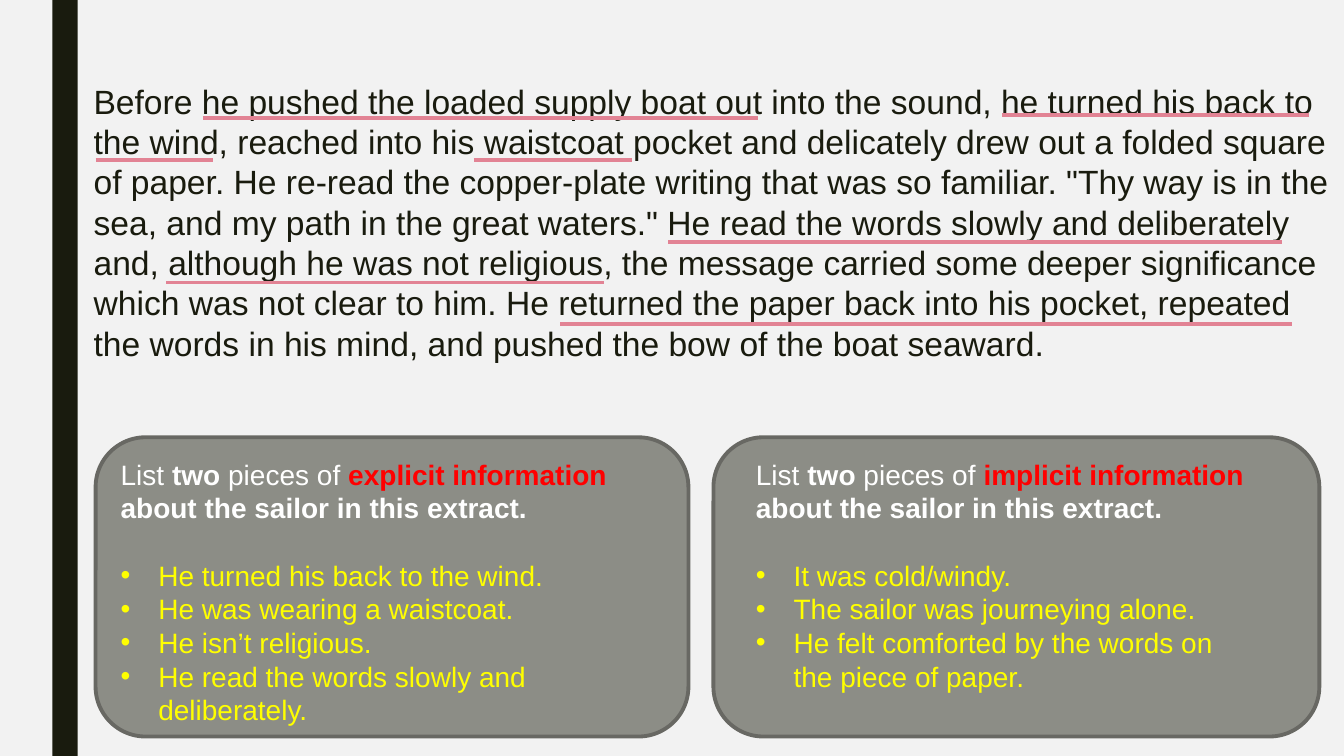
from dataclasses import dataclass

from lxml import etree
from pptx import Presentation
from pptx.dml.color import RGBColor
from pptx.enum.shapes import MSO_CONNECTOR, MSO_SHAPE
from pptx.oxml.ns import qn
from pptx.util import Cm, Pt

RECT = MSO_SHAPE.RECTANGLE
ROUNDED = MSO_SHAPE.ROUNDED_RECTANGLE
STRAIGHT = MSO_CONNECTOR.STRAIGHT


@dataclass(frozen=True)
class Theme:
    font: str = "Arial"
    background: RGBColor = RGBColor(0xF2, 0xF2, 0xF2)
    dark: RGBColor = RGBColor(0x19, 0x1B, 0x0E)
    panel: RGBColor = RGBColor(0x8C, 0x8D, 0x86)
    border: RGBColor = RGBColor(0x68, 0x68, 0x63)
    white: RGBColor = RGBColor(0xFF, 0xFF, 0xFF)
    key: RGBColor = RGBColor(0xFF, 0x00, 0x00)
    answer: RGBColor = RGBColor(0xFF, 0xFF, 0x00)
    underline: RGBColor = RGBColor(0xE2, 0x83, 0x94)
    extract_size: Pt = Pt(24)
    panel_size: Pt = Pt(20)
    line_width: Pt = Pt(2.75)


THEME = Theme()

EXTRACT = (
    "Before he pushed the loaded supply boat out into the sound, he turned his "
    "back to the wind, reached into his waistcoat pocket and delicately drew out "
    "a folded square of paper. He re-read the copper-plate writing that was so "
    'familiar. "Thy way is in the sea, and my path in the great waters." He read '
    "the words slowly and deliberately and, although he was not religious, the "
    "message carried some deeper significance which was not clear to him. He "
    "returned the paper back into his pocket, repeated the words in his mind, "
    "and pushed the bow of the boat seaward."
)

# Start, end and height of each underline, in cm from the extract's corner
UNDERLINES = [
    (23.14, 30.89, 0.99),
    (9.83, 13.82, 2.13),
    (2.08, 13.11, 5.21),
    (14.73, 30.2, 4.19),
    (0.3, 3.25, 2.13),
    (3.0, 16.99, 1.07),
    (12.01, 30.45, 6.25),
]

# Panel left and width and its text inset in cm, kind of information, answers
PANELS = [
    (2.41, 14.94, 0.38, "explicit", [
        "He turned his back to the wind.",
        "He was wearing a waistcoat.",
        "He isn’t religious.",
        "He read the words slowly and deliberately.",
    ]),
    (17.98, 15.27, 0.82, "implicit", [
        "It was cold/windy.",
        "The sailor was journeying alone.",
        "He felt comforted by the words on the piece of paper.",
    ]),
]


def add_box(s, kind, left, top, width, height, fill, border=None):
    sp = s.shapes.add_shape(kind, left, top, width, height)
    sp.shadow.inherit = False
    sp.fill.solid()
    sp.fill.fore_color.rgb = fill
    if border is None:
        sp.line.fill.background()
    else:
        sp.line.color.rgb = border
        sp.line.width = THEME.line_width


def add_text_frame(s, left, top, width, height):
    tf = s.shapes.add_textbox(left, top, width, height).text_frame
    tf.word_wrap = True
    return tf


def style(p, size, color):
    p.font.name = THEME.font
    p.font.size = size
    p.font.color.rgb = color


def add_bullet(p, indent):
    pPr = p._p.get_or_add_pPr()
    pPr.set("marL", str(indent))
    pPr.set("indent", str(-indent))
    for bullet in (
        etree.Element(qn("a:buFont"), typeface=THEME.font),
        etree.Element(qn("a:buChar"), char="•"),
    ):
        pPr.insert_element_before(bullet, "a:tabLst", "a:defRPr", "a:extLst")


def add_underline(s, x1, x2, y):
    line = s.shapes.add_connector(STRAIGHT, x1, y, x2, y)
    line.line.color.rgb = THEME.underline
    line.line.width = THEME.line_width
    etree.SubElement(line._element.spPr, qn("a:effectLst"))


def add_extract(s, left, top, width, height):
    tf = add_text_frame(s, left, top, width, height)
    p = tf.paragraphs[0]
    p.text = EXTRACT
    style(p, THEME.extract_size, THEME.dark)
    for start, end, y in UNDERLINES:
        add_underline(s, left + Cm(start), left + Cm(end), top + Cm(y))


def add_panel(s, left, top, width, height, inset, kind, answers):
    add_box(s, ROUNDED, left, top, width, height, THEME.panel, THEME.border)
    tf = add_text_frame(s, left + inset, top + Cm(0.38), Cm(12.95), height - Cm(0.38))
    p = tf.paragraphs[0]
    style(p, THEME.panel_size, THEME.white)
    for text, bold, color in [
        ("List ", False, THEME.white),
        ("two ", True, THEME.white),
        ("pieces of ", False, THEME.white),
        (f"{kind} information ", True, THEME.key),
        ("about the sailor in this extract.", True, THEME.white),
    ]:
        r = p.add_run()
        r.text = text
        r.font.bold = bold
        r.font.color.rgb = color
    for i, answer in enumerate(answers):
        p = tf.add_paragraph()
        p.text = answer
        style(p, THEME.panel_size, THEME.answer)
        add_bullet(p, Cm(0.95))
        if i == 0:
            p.space_before = Pt(24)


def main():
    prs = Presentation()
    prs.slide_width, prs.slide_height = Cm(33.87), Cm(19.05)
    s = prs.slides.add_slide(prs.slide_layouts[6])
    s.background.fill.solid()
    s.background.fill.fore_color.rgb = THEME.background

    add_box(s, RECT, Cm(1.32), 0, Cm(0.64), prs.slide_height, THEME.dark)
    add_extract(s, Cm(2.11), Cm(1.91), Cm(31.75), Cm(9.5))
    for left, width, inset, kind, answers in PANELS:
        add_panel(s, Cm(left), Cm(11.02), Cm(width), Cm(7.54), Cm(inset), kind, answers)
    prs.save("out.pptx")


if __name__ == "__main__":
    main()
